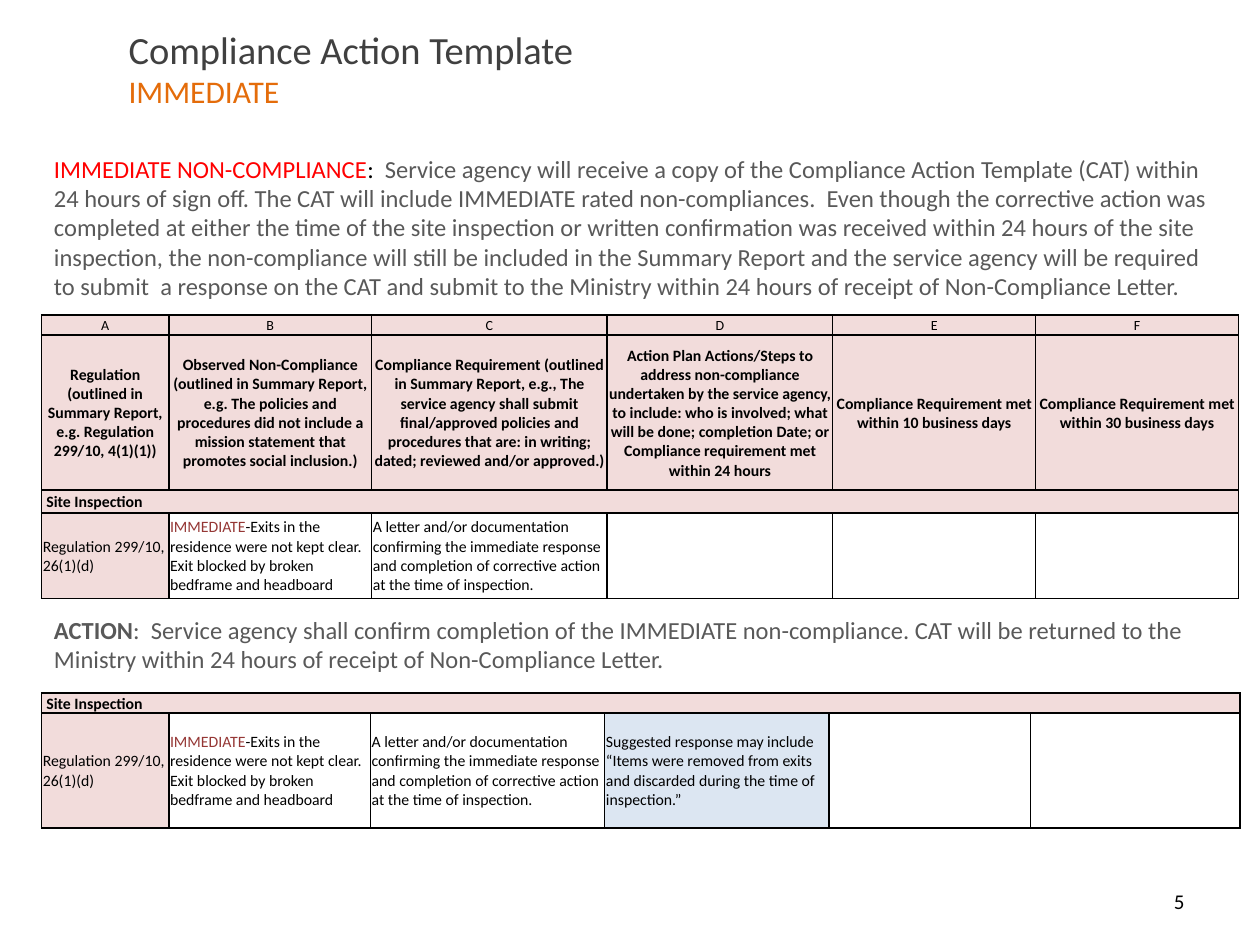
from lxml.etree import SubElement
from pptx import Presentation
from pptx.dml.color import RGBColor
from pptx.enum.text import MSO_ANCHOR, MSO_AUTO_SIZE, PP_ALIGN
from pptx.oxml import parse_xml
from pptx.oxml.ns import nsdecls, qn
from pptx.util import Inches, Pt

PINK, WHITE, BLUE = "F2DCDB", "FFFFFF", "DCE6F2"
BLACK, GREY, RED = "000000", "595959", "953735"


def write(frame, *parts, size=9, color=BLACK, bold=False, align=PP_ALIGN.LEFT, before=0):
    """Each part is a text or a (text, format) pair; a newline breaks the line."""
    frame.word_wrap = True
    para = frame.paragraphs[0]
    para.alignment = align
    para.space_before = Pt(before)
    for part in parts:
        text, look = part if isinstance(part, tuple) else (part, {})
        if text == "\n":
            para.add_line_break()
            continue
        run = para.add_run()
        run.text = text
        font = run.font
        font.name = "Calibri"
        font.size = Pt(look.get("size", size))
        font.bold = look.get("bold", bold)
        font.color.rgb = RGBColor.from_string(look.get("color", color))
    if not parts:
        SubElement(para._p, qn("a:endParaRPr"), sz=str(size * 100))


def grid(top, cols, rows):
    """Add a bordered table; each row is (height, cells, format)."""
    table = slide.shapes.add_table(
        len(rows), len(cols), Inches(0.33), Inches(top),
        Inches(sum(cols)), Inches(sum(row[0] for row in rows))).table
    table.first_row = table.horz_banding = False
    for col, width in zip(table.columns, cols):
        col.width = Inches(width)
    for r, (height, cells, look) in enumerate(rows):
        table.rows[r].height = Inches(height)
        if len(cells) == 1:
            table.cell(r, 0).merge(table.cell(r, len(cols) - 1))
        for c in range(len(cols)):
            cell = table.cell(r, c)
            parts, tint = cells[c] if c < len(cells) else ([], PINK)
            cell.margin_left = cell.margin_right = cell.margin_top = Inches(0.01)
            cell.margin_bottom = 0
            cell.vertical_anchor = MSO_ANCHOR.MIDDLE
            write(cell.text_frame, *parts, **look)
            # Borders come before the fill in the cell properties
            for side in ("lnL", "lnR", "lnT", "lnB"):
                cell._tc.get_or_add_tcPr().append(parse_xml(
                    f'<a:{side} {nsdecls("a")} w="12700"><a:solidFill>'
                    f'<a:srgbClr val="{BLACK}"/></a:solidFill></a:{side}>'))
            cell.fill.solid()
            cell.fill.fore_color.rgb = RGBColor.from_string(tint)


deck = Presentation()
deck.slide_width, deck.slide_height = Inches(10), Inches(7.5)
slide = deck.slides.add_slide(deck.slide_layouts[5])

# Title
title = slide.shapes.title
title.left, title.top = Inches(0.92), Inches(0.25)
title.width, title.height = Inches(7.5), Inches(0.58)
title.text_frame.auto_size = MSO_AUTO_SIZE.NONE
title.text_frame.vertical_anchor = MSO_ANCHOR.MIDDLE
write(title.text_frame, "Compliance Action Template", "\n",
      ("IMMEDIATE", {"size": 18, "color": "E46C0A"}), size=22, color="404040")

# Body texts and page number
notes = [
    (0.33, 1.17, 9.5, 1.28, [
        ("IMMEDIATE NON-COMPLIANCE", {"color": "FF0000"}),
        (":  ", {"color": BLACK}),
        "Service agency will receive a copy of the Compliance Action Template (CAT) "
        "within 24 hours of sign off. The CAT will include IMMEDIATE rated "
        "non-compliances.  Even though the corrective action was completed at either "
        "the time of the site inspection or written confirmation was received within "
        "24 hours of the site inspection, the non-compliance will still be included in "
        "the Summary Report and the service agency will be required to submit  a "
        "response on the CAT and submit to the Ministry within 24 hours of receipt of "
        "Non-Compliance Letter."], {"size": 14, "color": GREY}),
    (0.33, 4.83, 9.5, 0.57, [
        ("ACTION", {"bold": True}),
        ":  Service agency shall confirm completion of the IMMEDIATE non-compliance. "
        "CAT will be returned to the Ministry within 24 hours of receipt of "
        "Non-Compliance Letter."], {"size": 14, "color": GREY}),
    (7.17, 6.95, 2.33, 0.4, ["5"], {"size": 12, "align": PP_ALIGN.RIGHT}),
]
for left, top, width, height, parts, look in notes:
    box = slide.shapes.add_textbox(Inches(left), Inches(top), Inches(width), Inches(height))
    write(box.text_frame, *parts, **look)
box.text_frame.vertical_anchor = MSO_ANCHOR.MIDDLE

# Cells shared by both tables
site = [([" Site Inspection"], PINK)]
case = [
    (["Regulation 299/10, 26(1)(d)"], PINK),
    ([("IMMEDIATE", {"color": RED}),
      "-Exits in the residence were not kept clear. Exit blocked by broken "
      "bedframe and headboard"], WHITE),
    (["A letter and/or documentation confirming the immediate response and "
      "completion of corrective action at the time of inspection."], WHITE),
]
blank = ([], WHITE)
reply = (["Suggested response may include “Items were removed from exits and "
          "discarded during the time of inspection.”"], BLUE)
heads = [
    "Regulation (outlined in Summary Report, e.g. Regulation 299/10, 4(1)(1))",
    "Observed Non-Compliance (outlined in Summary Report, e.g. The policies and "
    "procedures did not include a mission statement that promotes social inclusion.)",
    "Compliance Requirement (outlined in Summary Report, e.g., The service agency "
    "shall submit final/approved policies and procedures that are: in writing; "
    "dated; reviewed and/or approved.)",
    "Action Plan Actions/Steps to address non-compliance undertaken by the service "
    "agency, to include: who is involved; what will be done; completion Date; or "
    "Compliance requirement met within 24 hours",
    "Compliance Requirement met within 10 business days",
    "Compliance Requirement met within 30 business days",
]

# Template table
grid(2.5, [1.01, 1.61, 1.87, 1.79, 1.61, 1.61], [
    (0.16, [([key], PINK) for key in "ABCDEF"], {"size": 8, "align": PP_ALIGN.CENTER}),
    (1.23, [([head], PINK) for head in heads], {"bold": True, "align": PP_ALIGN.CENTER}),
    (0.18, site, {"bold": True}),
    (0.68, case + [blank] * 3, {}),
])

# Table with the suggested response
grid(5.5, [1.01, 1.6, 1.86, 1.78, 1.6, 1.66], [
    (0.16, site, {"bold": True}),
    (0.91, case + [reply] + [blank] * 2, {}),
])

deck.save("out.pptx")
